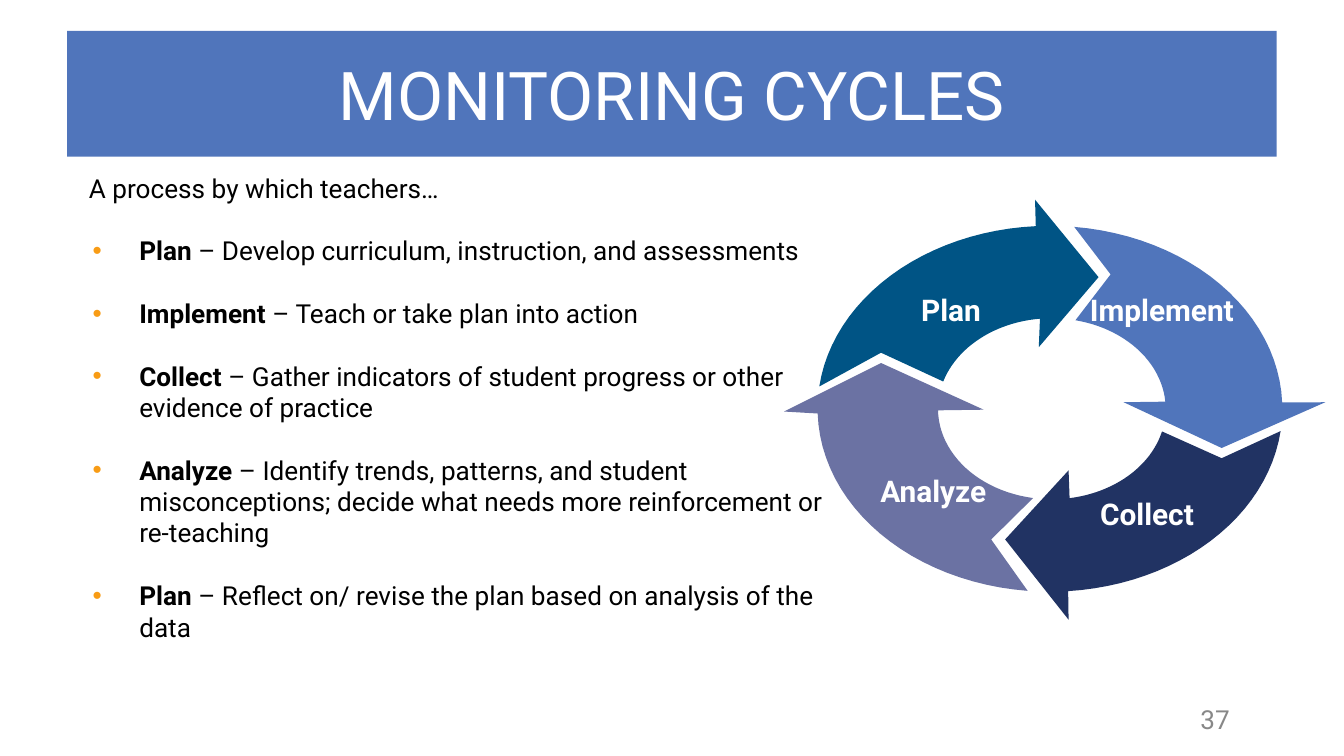
import math

from lxml import etree
from pptx import Presentation
from pptx.dml.color import RGBColor
from pptx.enum import shapes, text
from pptx.oxml.ns import qn
from pptx.util import Pt

FONT = "Roboto"
BLUE = RGBColor(0x50, 0x75, 0xBB)
TEAL = RGBColor(0x00, 0x54, 0x85)
NAVY = RGBColor(0x21, 0x33, 0x63)
VIOLET = RGBColor(0x6B, 0x72, 0xA3)
ORANGE = RGBColor(0xF8, 0x9C, 0x15)
GRAY = RGBColor(0x88, 0x88, 0x88)
BLACK = RGBColor(0, 0, 0)
WHITE = RGBColor(0xFF, 0xFF, 0xFF)

STEPS = [
    ("Plan", " – Develop curriculum, instruction, and assessments"),
    ("Implement", " – Teach or take plan into action"),
    ("Collect", " – Gather indicators of student progress or other evidence of practice"),
    ("Analyze", " – Identify trends, patterns, and student misconceptions; "
                "decide what needs more reinforcement or re-teaching"),
    ("Plan", " – Reflect on/ revise the plan based on analysis of the data"),
]

# Ring radii, and the shift of the inner ellipse, in points
OUTER = (124.5, 98, 0)
INNER = (61, 48.5, 1)

# Clockwise arrows; points are relative to the ring's centre, angles in degrees
ARROWS = [
    dict(label="Plan", color=TEAL, outer=(187, 266.5), inner=(264, 197.5),
         head=[(-8, -112), (26, -70.5), (-6, -33)], notch=(-90.5, -30), label_at=(-53, -52)),
    dict(label="Collect", color=NAVY, outer=(7, 85.5), inner=(81, 14.5),
         head=[(10, 113), (-24, 70), (10, 33)], notch=(92, 26.5), label_at=(52, 57)),
    dict(label="Analyze", color=VIOLET, outer=(95.5, 178.5), inner=(179, 99.5),
         head=[(-142.5, 1.5), (-90.5, -24.5), (-35.5, 0.5)], notch=(-31.5, 70),
         label_at=(-62.5, 45)),
    dict(label="Implement", color=BLUE, outer=(276, 358), inner=(355.5, 282),
         head=[(147.5, -3.5), (92, 21), (39.5, -3.5)], notch=(32.5, -72),
         label_at=(60, -52.5)),
]


def set_values(target, values):
    for name, value in values.items():
        setattr(target, name, value)


def set_frame(shape, side, top, anchor):
    set_values(shape.text_frame, dict(
        margin_left=Pt(side), margin_right=Pt(side), margin_top=Pt(top),
        margin_bottom=Pt(top), vertical_anchor=anchor, word_wrap=True))
    return shape.text_frame


def add_span(para, words, size, color, bold=False):
    span = para.add_run()
    span.text = words
    set_values(span.font, dict(name=FONT, size=Pt(size), bold=bold))
    span.font.color.rgb = color


def paint(shape, color):
    shape.shadow.inherit = False
    shape.fill.solid()
    shape.fill.fore_color.rgb = color
    shape.line.fill.background()


def add_line(page, box, words, size, color, bold=False, margins=(0, 0), spacing=None):
    shape = page.shapes.add_textbox(*map(Pt, box))
    para = set_frame(shape, *margins, text.MSO_ANCHOR.MIDDLE).paragraphs[0]
    set_values(para, dict(alignment=text.PP_ALIGN.CENTER, line_spacing=spacing))
    add_span(para, words, size, color, bold)


def add_title(page, box):
    banner = page.shapes.add_shape(shapes.MSO_SHAPE.RECTANGLE, *map(Pt, box))
    paint(banner, BLUE)
    para = set_frame(banner, 7.2, 3.6, text.MSO_ANCHOR.MIDDLE).paragraphs[0]
    para.alignment = text.PP_ALIGN.CENTER
    add_span(para, "MONITORING CYCLES", 36, WHITE)


def set_bullet(para):
    props = para._p.get_or_add_pPr()
    props.set("marL", str(Pt(27)))
    props.set("indent", str(Pt(-25)))
    color = etree.SubElement(props, qn("a:buClr"))
    etree.SubElement(color, qn("a:srgbClr")).set("val", str(ORANGE))
    etree.SubElement(props, qn("a:buFont")).set("typeface", "Arial")
    etree.SubElement(props, qn("a:buChar")).set("char", "•")


def add_steps(page, box):
    shape = page.shapes.add_textbox(*map(Pt, box))
    frame = set_frame(shape, 7.2, 7.2, text.MSO_ANCHOR.TOP)
    add_span(frame.paragraphs[0], "A process by which teachers…", 14, BLACK)
    for name, meaning in STEPS:
        para = frame.add_paragraph()
        para.space_before = Pt(16.75)
        set_bullet(para)
        add_span(para, name, 14, BLACK, True)
        add_span(para, meaning, 14, BLACK)


def arc(ellipse, span, count=24):
    rx, ry, shift = ellipse
    start, end = span
    angles = [math.radians(start + (end - start) * i / count) for i in range(count + 1)]
    return [(shift + rx * math.cos(a), ry * math.sin(a)) for a in angles]


def add_cycle(page, center):
    cx, cy = center
    # Arrows
    for arrow in ARROWS:
        outline = (arc(OUTER, arrow["outer"]) + arrow["head"]
                   + arc(INNER, arrow["inner"]) + [arrow["notch"]])
        points = [(Pt(cx + x), Pt(cy + y)) for x, y in outline]
        builder = page.shapes.build_freeform(*points[0])
        builder.add_line_segments(points[1:], close=True)
        paint(builder.convert_to_shape(), arrow["color"])
    # Labels
    width, height = 88, 16
    for arrow in ARROWS:
        x, y = arrow["label_at"]
        box = (cx + x - width / 2, cy + y - height / 2, width, height)
        add_line(page, box, arrow["label"], 16, WHITE, True, spacing=0.95)


def main():
    deck = Presentation()
    set_values(deck, dict(slide_width=Pt(720), slide_height=Pt(405)))
    page = deck.slides.add_slide(deck.slide_layouts[6])
    add_line(page, (612, 374.5, 78, 21.5), "37", 14, GRAY, margins=(7.2, 3.6))
    add_steps(page, (40.5, 85, 420, 279))
    add_cycle(page, (562.5, 219))
    add_title(page, (36, 16.5, 648, 67.5))
    deck.save("out.pptx")


if __name__ == "__main__":
    main()
